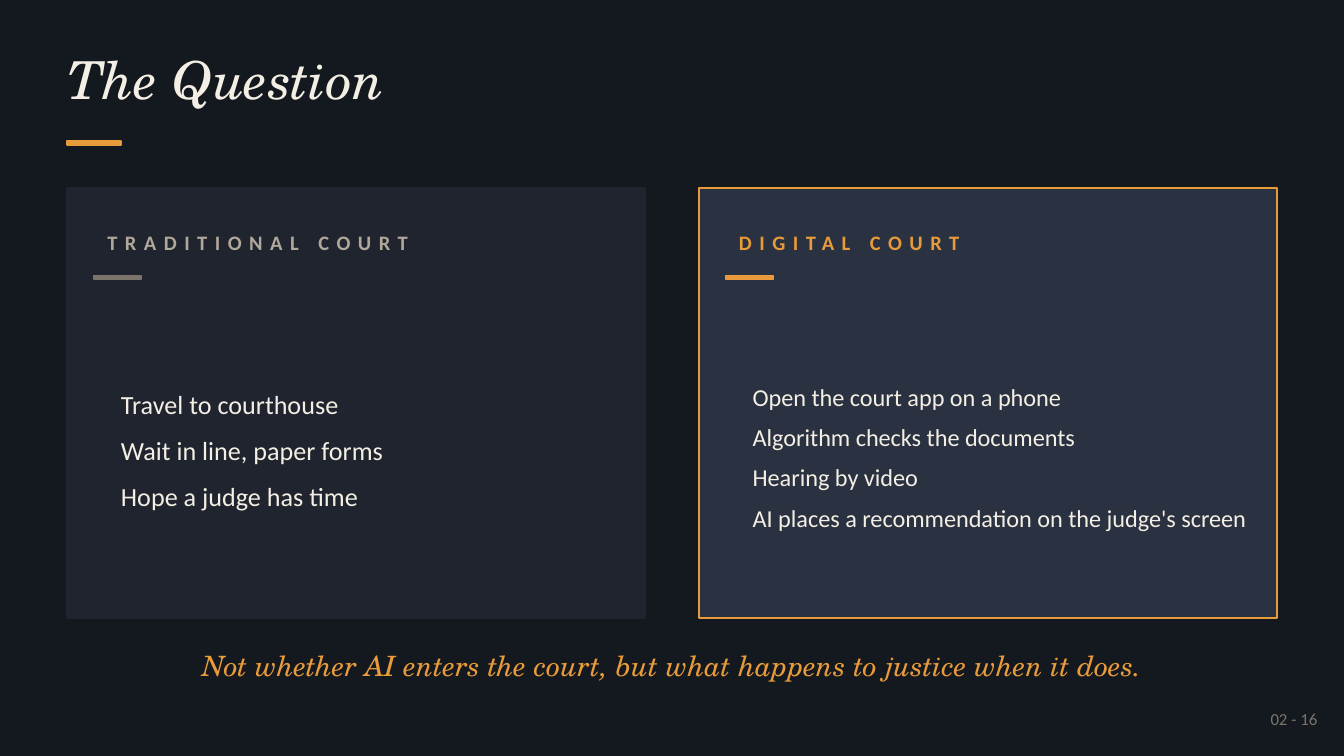
from lxml import etree
from pptx import Presentation
from pptx.dml.color import RGBColor
from pptx.enum.shapes import MSO_SHAPE
from pptx.enum.text import MSO_ANCHOR, MSO_AUTO_SIZE, PP_ALIGN
from pptx.oxml.ns import qn
from pptx.util import Inches, Pt

RECTANGLE = MSO_SHAPE.RECTANGLE
TOP, MIDDLE = MSO_ANCHOR.TOP, MSO_ANCHOR.MIDDLE
LEFT, CENTER, RIGHT = PP_ALIGN.LEFT, PP_ALIGN.CENTER, PP_ALIGN.RIGHT
FIXED_SIZE = MSO_AUTO_SIZE.NONE

NIGHT = RGBColor(0x14, 0x18, 0x1F)
CHARCOAL = RGBColor(0x1F, 0x24, 0x2E)
SLATE = RGBColor(0x2A, 0x31, 0x40)
AMBER = RGBColor(0xE8, 0x9B, 0x3A)
CREAM = RGBColor(0xF4, 0xEF, 0xE5)
SAND = RGBColor(0xB0, 0xA8, 0x9A)
STONE = RGBColor(0x7A, 0x74, 0x6A)

SERIF, SANS = "TeX Gyre Schola", "Calibri"
TWO_CONTENT_LAYOUT = 3


def place(box, left, top, width, height):
    box.left, box.top = Inches(left), Inches(top)
    box.width, box.height = Inches(width), Inches(height)


def write_text(box, *lines, size, color, font=SANS, bold=False, italic=False,
               align=LEFT, anchor=MIDDLE, after=0, tracking=0, inset=None):
    frame = box.text_frame
    frame.word_wrap = True
    frame.auto_size = FIXED_SIZE
    frame.vertical_anchor = anchor
    if inset is not None:
        frame.margin_left = frame.margin_right = Inches(inset)
        frame.margin_top = frame.margin_bottom = Inches(inset)
    for index, line in enumerate(lines):
        para = frame.paragraphs[0] if index == 0 else frame.add_paragraph()
        properties = para._p.get_or_add_pPr()
        properties.set("marL", "0")
        properties.set("indent", "0")
        etree.SubElement(properties, qn("a:buNone"))
        para.alignment = align
        para.space_before, para.space_after = Pt(0), Pt(after)
        span = para.add_run()
        span.text = line
        span.font.name, span.font.size = font, Pt(size)
        span.font.bold, span.font.italic = bold, italic
        span.font.color.rgb = color
        if tracking:
            span._r.get_or_add_rPr().set("spc", str(tracking * 100))


def add_text(page, area, *lines, **text_format):
    box = page.shapes.add_textbox(*map(Inches, area))
    write_text(box, *lines, **text_format)


def add_rectangle(page, area, fill, line):
    shape = page.shapes.add_shape(RECTANGLE, *map(Inches, area))
    shape.shadow.inherit = False
    shape.fill.solid()
    shape.fill.fore_color.rgb = fill
    shape.line.color.rgb = line
    shape.line.width = Pt(1)


def add_header(page, left, top, width, height):
    title = page.shapes.title
    place(title, left, top, width, height)
    write_text(title, "The Question", size=28, color=CREAM, font=SERIF,
               italic=True, anchor=TOP, inset=0)
    add_rectangle(page, (left, top + 0.7, 0.4, 0.03), AMBER, AMBER)


def add_court_card(page, body, area, heading, items, fill, border,
                   heading_color, accent, list_area, size, after):
    left, top, width, height = area
    add_rectangle(page, area, fill, border)
    add_text(page, (left + 0.2, top + 0.2, width - 0.3, 0.4), heading,
             size=11, color=heading_color, bold=True, tracking=4)
    add_rectangle(page, (left + 0.2, top + 0.65, 0.35, 0.03), accent, accent)
    list_left, list_top, list_width, list_height = list_area
    place(body, left + list_left, top + list_top, list_width, list_height)
    write_text(body, *items, size=size, color=CREAM, after=after)
    page.shapes._spTree.append(body._element)


def add_footer(page, left, top, width, height):
    add_text(page, (left, top, width, height),
             "Not whether AI enters the court, but what happens to justice when it does.",
             size=15, color=AMBER, font=SERIF, italic=True, align=CENTER)
    add_text(page, (left + width - 0.8, top + 0.45, 1.2, 0.3), "02 - 16",
             size=9, color=STONE, align=RIGHT)


def main():
    deck = Presentation()
    deck.slide_width = Inches(10)
    deck.slide_height = deck.slide_width * 9 // 16
    page = deck.slides.add_slide(deck.slide_layouts[TWO_CONTENT_LAYOUT])
    page.background.fill.solid()
    page.background.fill.fore_color.rgb = NIGHT
    traditional_body, digital_body = list(page.placeholders)[1:3]

    add_header(page, 0.5, 0.35, 9, 0.8)
    add_court_card(
        page, traditional_body, (0.5, 1.4, 4.3, 3.2), "TRADITIONAL COURT",
        ["Travel to courthouse", "Wait in line, paper forms",
         "Hope a judge has time"],
        fill=CHARCOAL, border=CHARCOAL, heading_color=SAND, accent=STONE,
        list_area=(0.3, 0.9, 4, 2.1), size=14, after=8)
    add_court_card(
        page, digital_body, (5.2, 1.4, 4.3, 3.2), "DIGITAL COURT",
        ["Open the court app on a phone", "Algorithm checks the documents",
         "Hearing by video", "AI places a recommendation on the judge's screen"],
        fill=SLATE, border=AMBER, heading_color=AMBER, accent=AMBER,
        list_area=(0.3, 0.9, 3.9, 2.2), size=13, after=6)
    add_footer(page, 0.5, 4.75, 9, 0.4)
    deck.save("out.pptx")


if __name__ == "__main__":
    main()
